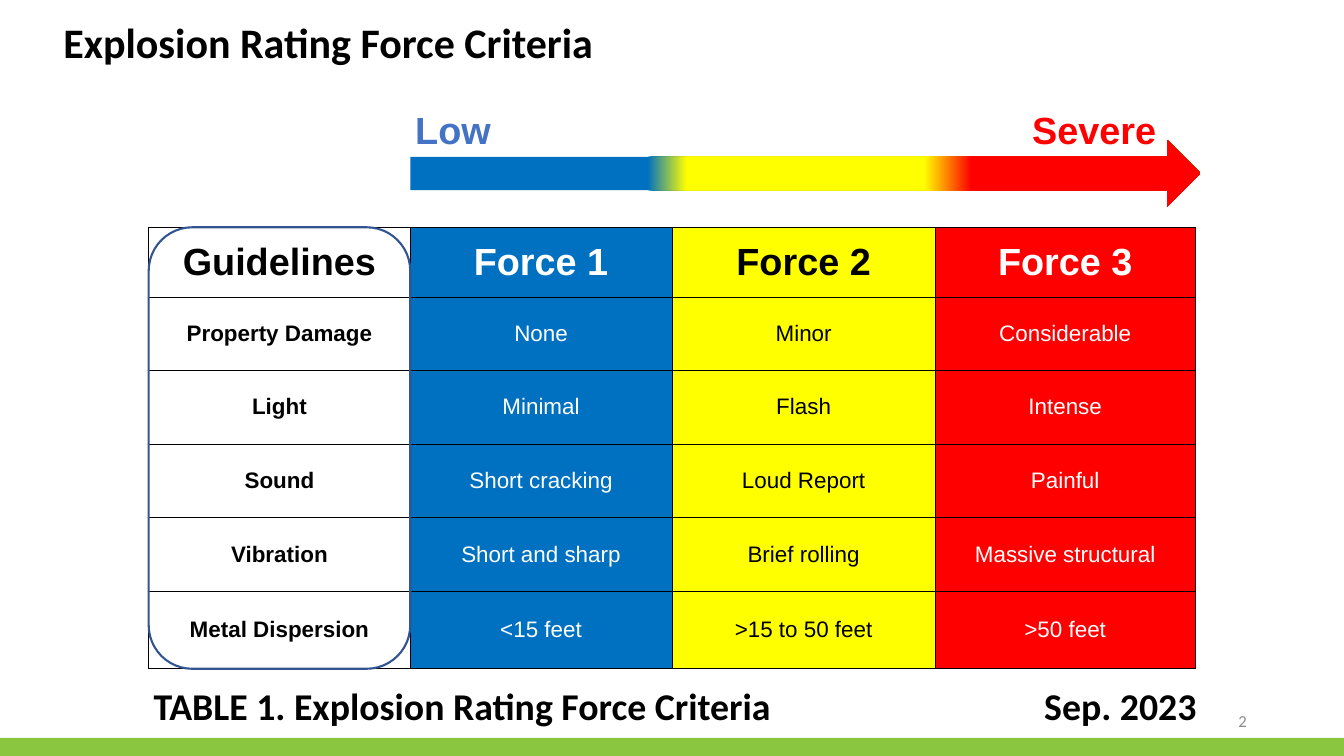
from typing import NamedTuple

from lxml import etree
from pptx import Presentation
from pptx.dml.color import RGBColor
from pptx.enum import shapes, text
from pptx.oxml import ns
from pptx.util import Pt

BLACK, WHITE = "000000", "FFFFFF"
BLUE, YELLOW, RED = "0070C0", "FFFF00", "FF0000"


class Box(NamedTuple):
    left: float
    top: float
    width: float
    height: float

    def lengths(self) -> list:
        return [Pt(value) for value in self]


class Column(NamedTuple):
    width: float
    fill: str
    ink: str
    entries: tuple


class Label(NamedTuple):
    wording: str
    box: Box
    style: dict


COLUMNS = (
    Column(373.7, WHITE, BLACK, ("Guidelines", "Property Damage", "Light", "Sound",
                                 "Vibration", "Metal Dispersion")),
    Column(373.7, BLUE, WHITE, ("Force 1", "None", "Minimal", "Short cracking",
                                "Short and sharp", "<15 feet")),
    Column(376.6, YELLOW, BLACK, ("Force 2", "Minor", "Flash", "Loud Report",
                                  "Brief rolling", ">15 to 50 feet")),
    Column(370.8, RED, WHITE, ("Force 3", "Considerable", "Intense", "Painful",
                               "Massive structural", ">50 feet")),
)
ROW_HEIGHTS = (99.4, *[105.1] * 4, 110.9)
CRITERIA = Box(212.4, 324.7, sum(c.width for c in COLUMNS), sum(ROW_HEIGHTS))
GUIDELINES = CRITERIA._replace(width=COLUMNS[0].width)
SCALE = Box(GUIDELINES.left + GUIDELINES.width, 200.2, 1129, 95)
SCALE_STOPS = ((30, BLUE), (35, YELLOW), (65, YELLOW), (71, RED))
CAPTION = Box(CRITERIA.left, 979.2, 1597, 79.2)
DATE_TAB = 1490

LABELS = (
    Label("2", Box(1356.5, 1000.8, 432, 57.6),
          dict(size=24, color="8C8C8C", bold=False, align=text.PP_ALIGN.RIGHT,
               anchor=text.MSO_ANCHOR.MIDDLE)),
    Label("Explosion Rating Force Criteria", Box(83.5, 28.8, 1353.6, 100),
          dict(size=60, spacing=0.9)),
    Label("TABLE 1. Explosion Rating Force Criteria\tSep. 2023", CAPTION,
          dict(size=54, spacing=0.9, right_tab=DATE_TAB)),
    Label("Low", Box(SCALE.left, 149, 239, 72.7),
          dict(size=54, font="Arial", color="4472C4")),
    Label("Severe", Box(1467.4, 149, 209.5, 72.7),
          dict(size=54, font="Arial", color=RED)),
)


def rgb(code: str) -> RGBColor:
    return RGBColor.from_string(code)


def add_xml(parent, tag: str, **attributes):
    return etree.SubElement(parent, ns.qn(tag), attributes)


def write(frame, wording: str, *, size: float, font: str = "Calibri", color: str = BLACK,
          bold: bool = True, align=text.PP_ALIGN.LEFT, anchor=text.MSO_ANCHOR.TOP,
          spacing: float = 1.0, right_tab: float = 0) -> None:
    frame.word_wrap = True
    frame.vertical_anchor = anchor
    paragraph = frame.paragraphs[0]
    paragraph.alignment = align
    paragraph.line_spacing = spacing
    if right_tab:
        tabs = add_xml(paragraph._p.get_or_add_pPr(), "a:tabLst")
        add_xml(tabs, "a:tab", pos=str(Pt(right_tab)), algn="r")
    run = paragraph.add_run()
    run.text = wording
    run.font.name, run.font.size, run.font.bold = font, Pt(size), bold
    run.font.color.rgb = rgb(color)


def add_label(slide, label: Label) -> None:
    frame = slide.shapes.add_textbox(*label.box.lengths()).text_frame
    write(frame, label.wording, **label.style)


def add_plain_shape(slide, kind, box: Box):
    """Add a shape with no shadow, fill or line."""
    shape = slide.shapes.add_shape(kind, *box.lengths())
    shape.shadow.inherit = False
    shape.fill.background()
    shape.line.fill.background()
    return shape


def add_footer_bar(slide) -> None:
    bar = add_plain_shape(slide, shapes.MSO_SHAPE.RECTANGLE, Box(0, 1054, 1920, 26))
    bar.fill.solid()
    bar.fill.fore_color.rgb = rgb("8BC641")


def add_guidelines_outline(slide) -> None:
    outline = add_plain_shape(slide, shapes.MSO_SHAPE.ROUNDED_RECTANGLE, GUIDELINES)
    outline.line.color.rgb = rgb("325491")
    outline.line.width = Pt(3)


def add_scale_arrow(slide) -> None:
    arrow = add_plain_shape(slide, shapes.MSO_SHAPE.RIGHT_ARROW, SCALE)
    arrow.fill.gradient()
    arrow.fill.gradient_angle = 0
    stops = arrow._element.spPr.find(".//" + ns.qn("a:gsLst"))
    for stop in list(stops):
        stops.remove(stop)
    for percent, color in SCALE_STOPS:
        stop = add_xml(stops, "a:gs", pos=str(percent * 1000))
        add_xml(stop, "a:srgbClr", val=color)


def add_borders(cell) -> None:
    """Draw the four cell borders; call before setting the cell's fill."""
    properties = cell._tc.get_or_add_tcPr()
    for side in ("a:lnL", "a:lnR", "a:lnT", "a:lnB"):
        border = add_xml(properties, side, w=str(Pt(1)))
        add_xml(add_xml(border, "a:solidFill"), "a:srgbClr", val=BLACK)


def add_criteria_table(slide) -> None:
    table = slide.shapes.add_table(
        len(ROW_HEIGHTS), len(COLUMNS), *CRITERIA.lengths()).table
    table.first_row = table.horz_banding = False
    for row, height in zip(table.rows, ROW_HEIGHTS):
        row.height = Pt(height)
    for c, column in enumerate(COLUMNS):
        table.columns[c].width = Pt(column.width)
        for r, entry in enumerate(column.entries):
            cell = table.cell(r, c)
            add_borders(cell)
            cell.fill.solid()
            cell.fill.fore_color.rgb = rgb(column.fill)
            cell.margin_left = cell.margin_right = Pt(8.6)
            cell.margin_top = cell.margin_bottom = Pt(2.9)
            write(cell.text_frame, entry, size=54 if r == 0 else 32, font="Arial",
                  color=column.ink, bold=r == 0 or c == 0, align=text.PP_ALIGN.CENTER)
            cell.vertical_anchor = text.MSO_ANCHOR.MIDDLE


def main() -> None:
    deck = Presentation()
    deck.slide_width, deck.slide_height = Pt(1920), Pt(1080)
    slide = deck.slides.add_slide(deck.slide_layouts[6])
    add_footer_bar(slide)
    add_criteria_table(slide)
    add_guidelines_outline(slide)
    add_scale_arrow(slide)
    for label in LABELS:
        add_label(slide, label)
    deck.save("out.pptx")


if __name__ == "__main__":
    main()
